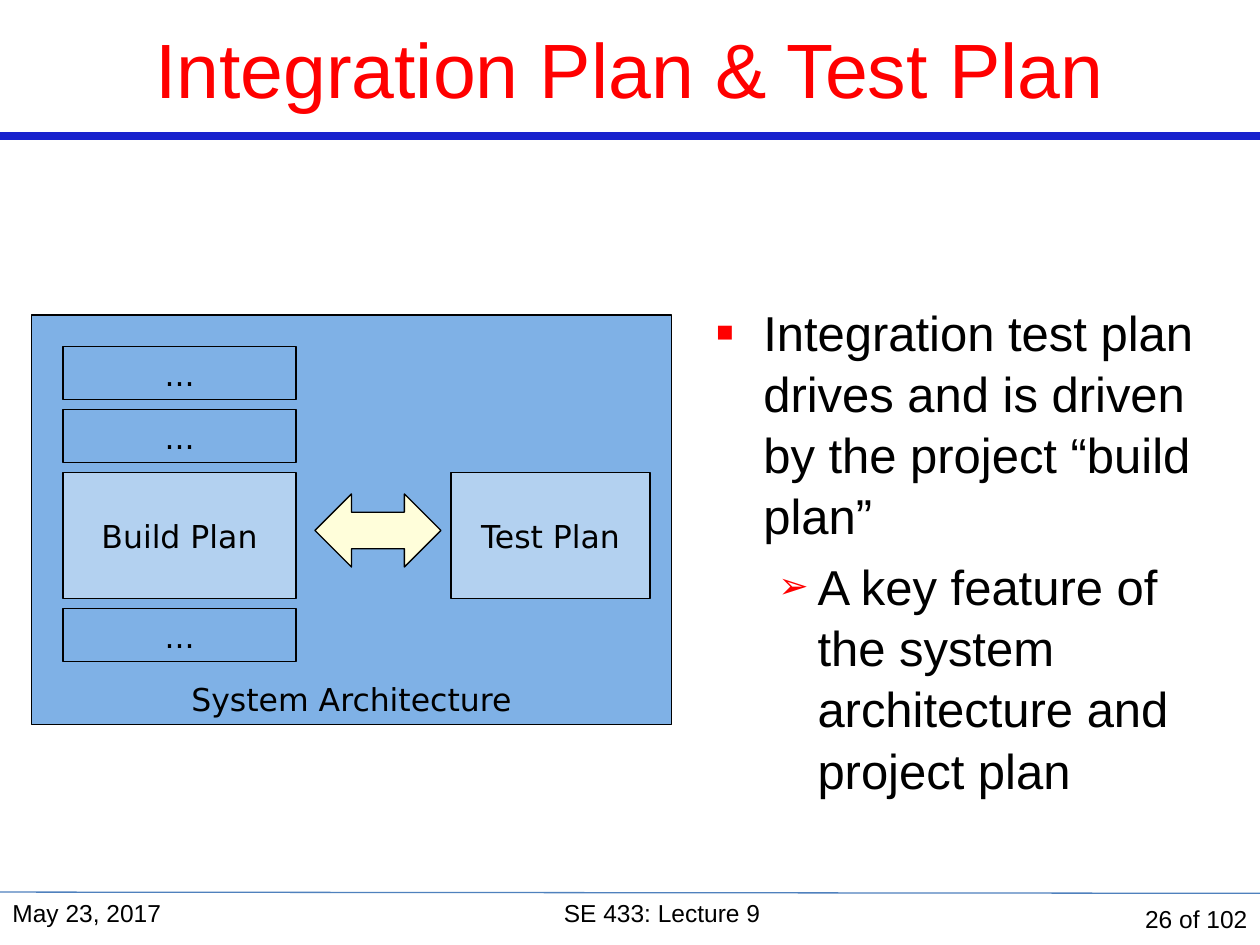
"""Build the slide on how the integration plan and the test plan meet."""
from dataclasses import dataclass
from typing import Any

from lxml import etree
from pptx import Presentation
from pptx.dml.color import RGBColor
from pptx.enum.shapes import MSO_CONNECTOR, MSO_SHAPE
from pptx.enum.text import MSO_ANCHOR, PP_ALIGN
from pptx.oxml.ns import qn
from pptx.util import Inches, Pt

RECT, ARROW = MSO_SHAPE.RECTANGLE, MSO_SHAPE.LEFT_RIGHT_ARROW
LINE = MSO_CONNECTOR.STRAIGHT
TOP, MIDDLE, BOTTOM = MSO_ANCHOR.TOP, MSO_ANCHOR.MIDDLE, MSO_ANCHOR.BOTTOM
LEFT, CENTER, RIGHT = PP_ALIGN.LEFT, PP_ALIGN.CENTER, PP_ALIGN.RIGHT

BLACK = RGBColor(0x00, 0x00, 0x00)
RED = RGBColor(0xFF, 0x00, 0x00)
NAVY = RGBColor(0x18, 0x22, 0xCD)
STEEL = RGBColor(0x4F, 0x81, 0xBD)
BLUE = RGBColor(0x7F, 0xB1, 0xE6)
PALE = RGBColor(0xB3, 0xD1, 0xF0)
CREAM = RGBColor(0xFF, 0xFE, 0xDA)

SANS, DEJA = "Arial", "DejaVu Sans"
COL, WIDE = 0.5, 1.85
LOW, TALL = 0.42, 1.0
ROW = 3.75


@dataclass
class Box:
    """A filled shape with an optional label."""
    left: float
    top: float
    width: float
    height: float
    text: str = "..."
    fill: RGBColor = BLUE
    anchor: Any = BOTTOM
    kind: Any = RECT


@dataclass
class Label:
    """A line of text in a frame."""
    left: float
    top: float
    width: float
    height: float
    text: str
    size: int = 14
    color: RGBColor = BLACK
    align: Any = LEFT
    anchor: Any = TOP


@dataclass
class Point:
    """A bulleted paragraph."""
    text: str
    mark: str
    scale: int
    level: int
    margin: float
    hang: float
    gap: float


@dataclass
class Rule:
    """A line across the slide."""
    start: float
    end: float
    color: RGBColor
    weight: float


RULES = [Rule(1.08, 1.08, NAVY, 4.5), Rule(7.08, 7.09, STEEL, 0.75)]
BOXES = [
    Box(0.25, 2.5, 5.08, 3.25, "System Architecture"),
    Box(COL, ROW, WIDE, TALL, "Build Plan", PALE, MIDDLE),
    *[Box(COL, top, WIDE, LOW) for top in (2.75, 3.25, 4.83)],
    Box(3.58, ROW, 1.58, TALL, "Test Plan", PALE, MIDDLE),
    Box(2.5, 3.92, 1, 0.58, "", CREAM, MIDDLE, ARROW),
]
LABELS = [
    Label(0, 0, 10, 1.08, "Integration Plan & Test Plan", 44, RED, CENTER, MIDDLE),
    Label(0, 7.08, 2.17, LOW, "May 23, 2017"),
    Label(2.17, 7.08, 6.17, LOW, "SE 433: Lecture 9", align=CENTER),
    Label(8.33, 7.08, 1.67, LOW, "26 of 102", align=RIGHT, anchor=MIDDLE),
]
POINTS = [
    Point("Integration test plan drives and is driven by the project “build plan”",
          "▪", 114, 0, 0.38, 0.38, 0),
    Point("A key feature of the system architecture and project plan",
          "➢", 74, 1, 0.81, 0.31, 5.6),
]


def style(item: Any, values: dict[str, Any]) -> None:
    """Set each named value on the item."""
    for name, value in values.items():
        setattr(item, name, value)


def write(para: Any, text: str, size: int, face: str, color: RGBColor) -> None:
    """Add a run of text to the paragraph."""
    run = para.add_run()
    run.text = text
    style(run.font, {"size": Pt(size), "name": face})
    run.font.color.rgb = color


def frame(slide: Any, left: float, top: float, width: float, height: float) -> Any:
    """Add a wrapping text box and return its text frame."""
    area = slide.shapes.add_textbox(*map(Inches, (left, top, width, height)))
    area.text_frame.word_wrap = True
    return area.text_frame


def draw_rule(slide: Any, rule: Rule) -> None:
    """Draw a line across the slide."""
    line = slide.shapes.add_connector(
        LINE, Inches(0), Inches(rule.start), Inches(10), Inches(rule.end))
    line.line.color.rgb = rule.color
    line.line.width = Pt(rule.weight)
    etree.SubElement(line._element.spPr, qn("a:effectLst"))


def draw_box(slide: Any, box: Box) -> None:
    """Draw a shape with its label."""
    shape = slide.shapes.add_shape(
        box.kind, *map(Inches, (box.left, box.top, box.width, box.height)))
    shape.shadow.inherit = False
    shape.fill.solid()
    shape.fill.fore_color.rgb = box.fill
    shape.line.color.rgb = BLACK
    shape.line.width = Pt(0.75)
    if box.text:
        body = shape.text_frame
        style(body, {"word_wrap": False, "vertical_anchor": box.anchor})
        body.paragraphs[0].alignment = CENTER
        write(body.paragraphs[0], box.text, 18, DEJA, BLACK)


def draw_label(slide: Any, label: Label) -> None:
    """Draw a single line of text."""
    body = frame(slide, label.left, label.top, label.width, label.height)
    body.vertical_anchor = label.anchor
    body.paragraphs[0].alignment = label.align
    write(body.paragraphs[0], label.text, label.size, SANS, label.color)


def add_mark(para: Any, point: Point) -> None:
    """Give the paragraph its indent and red bullet."""
    props = para._p.get_or_add_pPr()
    props.set("marL", str(Inches(point.margin)))
    props.set("indent", str(-Inches(point.hang)))
    tint = etree.SubElement(props, qn("a:buClr"))
    etree.SubElement(tint, qn("a:srgbClr"), val=str(RED))
    etree.SubElement(props, qn("a:buSzPct"), val=str(point.scale * 1000))
    etree.SubElement(props, qn("a:buFont"), typeface=SANS)
    etree.SubElement(props, qn("a:buChar"), char=point.mark)


def draw_points(slide: Any, points: list[Point]) -> None:
    """Draw the bulleted list."""
    body = frame(slide, 5.58, 2.33, 4.08, 3.83)
    for rank, point in enumerate(points):
        para = body.add_paragraph() if rank else body.paragraphs[0]
        style(para, {"level": point.level, "line_spacing": 1.04,
                     "space_before": Pt(point.gap)})
        add_mark(para, point)
        write(para, point.text, 28, SANS, BLACK)


def main() -> None:
    """Build and save the slide."""
    deck = Presentation()
    style(deck, {"slide_width": Inches(10), "slide_height": Inches(7.5)})
    slide = deck.slides.add_slide(deck.slide_layouts[6])
    for rule in RULES:
        draw_rule(slide, rule)
    for box in BOXES:
        draw_box(slide, box)
    for label in LABELS:
        draw_label(slide, label)
    draw_points(slide, POINTS)
    deck.save("out.pptx")


if __name__ == "__main__":
    main()
